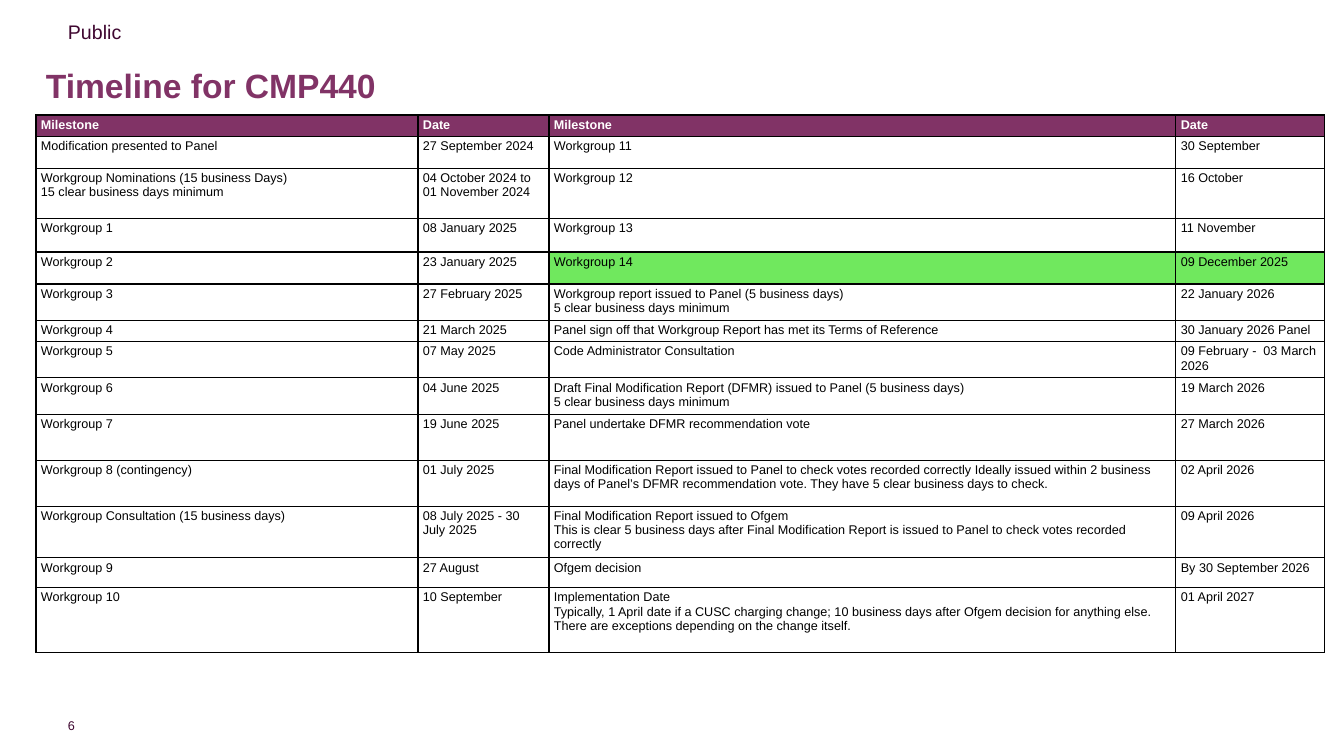
from lxml import etree
from pptx import Presentation
from pptx.dml.color import RGBColor
from pptx.enum.text import MSO_ANCHOR, PP_ALIGN
from pptx.oxml.ns import qn
from pptx.util import Pt

EMU_PER_INCH = 914400
PX_PER_INCH = 100.8
PLUM = RGBColor(0x81, 0x33, 0x66)
DARK_PLUM = RGBColor(0x3F, 0x07, 0x30)
GREEN = RGBColor(0x70, 0xE8, 0x5E)
WHITE = RGBColor(0xFF, 0xFF, 0xFF)
BLACK = RGBColor(0x00, 0x00, 0x00)
FONT = "Arial"

CURRENT_MILESTONE = "Workgroup 14"
COLUMN_WIDTHS = (382, 131, 627, 149)
# Row height, then milestone and date for each half of the timeline
TIMELINE = [
    (19, "Milestone", "Date", "Milestone", "Date"),
    (32, "Modification presented to Panel", "27 September 2024",
     "Workgroup 11", "30 September"),
    (50, "Workgroup Nominations (15 business Days)\n15 clear business days minimum",
     "04 October 2024 to 01 November 2024", "Workgroup 12", "16 October"),
    (34, "Workgroup 1", "08 January 2025", "Workgroup 13", "11 November"),
    (32, "Workgroup 2", "23 January 2025", CURRENT_MILESTONE, "09 December 2025"),
    (33, "Workgroup 3", "27 February 2025",
     "Workgroup report issued to Panel (5 business days)\n5 clear business days minimum",
     "22 January 2026"),
    (19, "Workgroup 4", "21 March 2025",
     "Panel sign off that Workgroup Report has met its Terms of Reference",
     "30 January 2026 Panel"),
    (34, "Workgroup 5", "07 May 2025", "Code Administrator Consultation",
     "09 February -  03 March 2026"),
    (33, "Workgroup 6", "04 June 2025",
     "Draft Final Modification Report (DFMR) issued to Panel (5 business days)\n"
     "5 clear business days minimum", "19 March 2026"),
    (46, "Workgroup 7", "19 June 2025",
     "Panel undertake DFMR recommendation vote", "27 March 2026"),
    (46, "Workgroup 8 (contingency)", "01 July 2025",
     "Final Modification Report issued to Panel to check votes recorded correctly "
     "Ideally issued within 2 business days of Panel’s DFMR recommendation vote. "
     "They have 5 clear business days to check.", "02 April 2026"),
    (47, "Workgroup Consultation (15 business days)", "08 July 2025 - 30 July 2025",
     "Final Modification Report issued to Ofgem\n"
     "This is clear 5 business days after Final Modification Report is issued "
     "to Panel to check votes recorded correctly", "09 April 2026"),
    (30, "Workgroup 9", "27 August", "Ofgem decision", "By 30 September 2026"),
    (65, "Workgroup 10", "10 September",
     "Implementation Date\n"
     "Typically, 1 April date if a CUSC charging change; 10 business days after "
     "Ofgem decision for anything else. There are exceptions depending on the "
     "change itself.", "01 April 2027"),
]


def px(length):
    return round(length * EMU_PER_INCH / PX_PER_INCH)


def style_text(frame, size, color, bold=False):
    for paragraph in frame.paragraphs:
        for run in paragraph.runs:
            run.font.name = FONT
            run.font.size = Pt(size)
            run.font.bold = bold
            run.font.color.rgb = color


def add_label(slide, box, text, size, color, bold=False, anchor=MSO_ANCHOR.TOP):
    frame = slide.shapes.add_textbox(*map(px, box)).text_frame
    frame.text = text
    frame.word_wrap = True
    frame.vertical_anchor = anchor
    style_text(frame, size, color, bold)
    return frame


def add_page_number(slide, box, number):
    frame = add_label(slide, box, number, 9, DARK_PLUM, anchor=MSO_ANCHOR.MIDDLE)
    frame.word_wrap = False
    frame.margin_left = frame.margin_right = 0
    frame.margin_top = frame.margin_bottom = 0
    frame.paragraphs[0].alignment = PP_ALIGN.RIGHT


def add_borders(cell):
    properties = cell._tc.get_or_add_tcPr()
    for side in ("a:lnL", "a:lnR", "a:lnT", "a:lnB"):
        line = etree.SubElement(properties, qn(side), w=str(Pt(1)))
        fill = etree.SubElement(line, qn("a:solidFill"))
        etree.SubElement(fill, qn("a:srgbClr"), val=str(BLACK))


def fill_cell(cell, text, background, color, bold):
    cell.text = text
    cell.margin_left = cell.margin_right = px(5)
    cell.margin_top = cell.margin_bottom = px(3)
    style_text(cell.text_frame, 9, color, bold)
    add_borders(cell)
    if background is None:
        cell.fill.background()
    else:
        cell.fill.solid()
        cell.fill.fore_color.rgb = background


def add_timeline(slide, left, top):
    width = sum(COLUMN_WIDTHS)
    height = sum(row[0] for row in TIMELINE)
    table = slide.shapes.add_table(
        len(TIMELINE), len(COLUMN_WIDTHS), px(left), px(top), px(width), px(height)).table
    table.horz_banding = False
    for column, column_width in zip(table.columns, COLUMN_WIDTHS):
        column.width = px(column_width)
    for index, (row_height, *texts) in enumerate(TIMELINE):
        header = index == 0
        table.rows[index].height = px(row_height)
        for position, text in enumerate(texts):
            current = position >= 2 and texts[2] == CURRENT_MILESTONE
            background = PLUM if header else GREEN if current else None
            fill_cell(table.cell(index, position), text, background,
                      WHITE if header else BLACK, header)


def build_timeline_slide(presentation):
    slide = presentation.slides.add_slide(presentation.slide_layouts[6])
    add_page_number(slide, (59, 718, 16, 15), "6")
    add_label(slide, (58, 15, 504, 34), "Public", 14, DARK_PLUM)
    title = add_label(slide, (36, 40, 1070, 96), "Timeline for CMP440", 24, PLUM,
                      bold=True, anchor=MSO_ANCHOR.MIDDLE)
    title.paragraphs[0].line_spacing = 0.9
    add_timeline(slide, 36, 115)


def main():
    presentation = Presentation()
    presentation.slide_width = px(1344)
    presentation.slide_height = px(756)
    build_timeline_slide(presentation)
    presentation.save("out.pptx")


if __name__ == "__main__":
    main()
